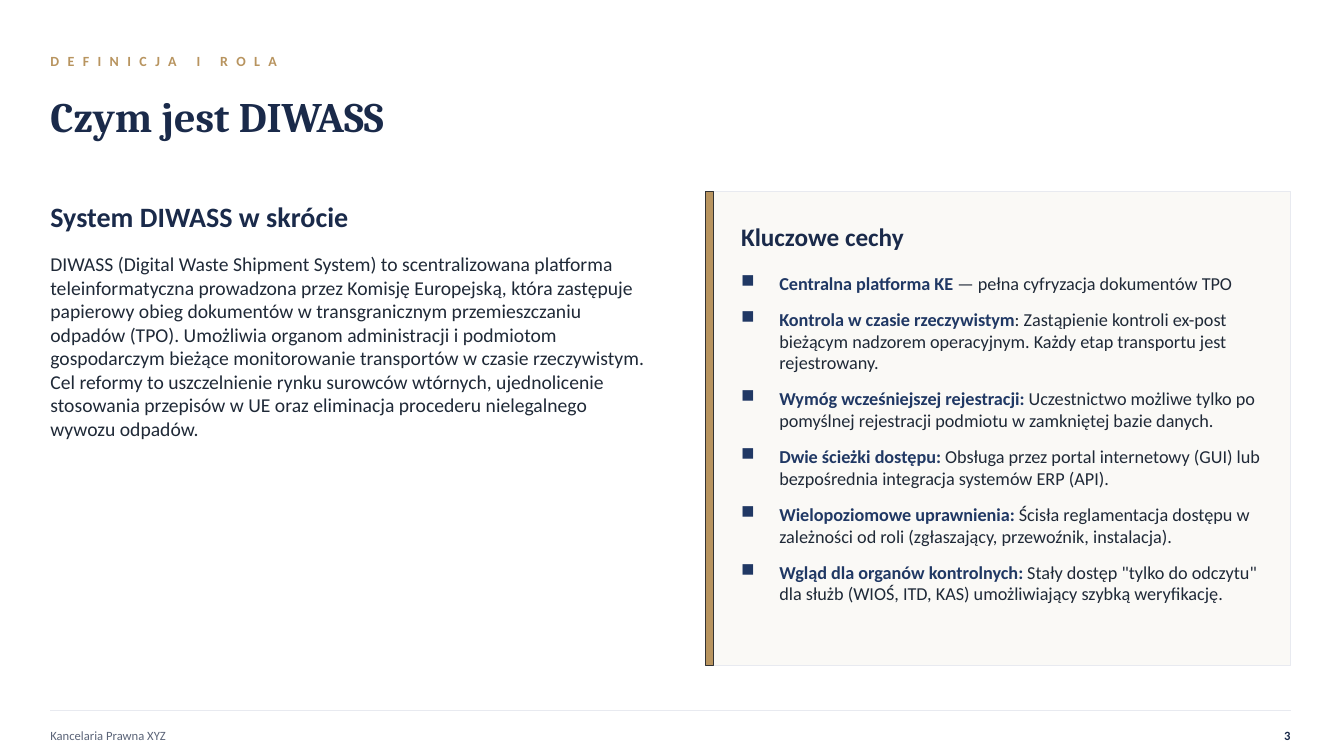
from dataclasses import dataclass

from lxml import etree
from pptx import Presentation
from pptx.dml.color import RGBColor
from pptx.enum import shapes, text
from pptx.oxml import ns
from pptx.util import Inches, Pt


@dataclass(frozen=True)
class Theme:
    navy: str = "1A2A4A"
    blue: str = "203864"
    ink: str = "1F2937"
    slate: str = "5B6478"
    gold: str = "B8945F"
    cream: str = "FAF9F6"
    rule: str = "E8EAF0"
    edge: str = "333333"
    sans: str = "Calibri"
    serif: str = "Cambria"
    title: int = 30
    heading: int = 20
    card_heading: int = 18
    body: int = 14
    item: int = 13
    eyebrow: int = 10
    footer: int = 9


THEME = Theme()
MARGIN, CONTENT_WIDTH = 0.5, 12.3

SUMMARY = (
    "DIWASS (Digital Waste Shipment System) to scentralizowana platforma "
    "teleinformatyczna prowadzona przez Komisję Europejską, która zastępuje "
    "papierowy obieg dokumentów w transgranicznym przemieszczaniu odpadów (TPO). "
    "Umożliwia organom administracji i podmiotom gospodarczym bieżące "
    "monitorowanie transportów w czasie rzeczywistym. Cel reformy to uszczelnienie "
    "rynku surowców wtórnych, ujednolicenie stosowania przepisów w UE oraz "
    "eliminacja procederu nielegalnego wywozu odpadów."
)
FEATURES = [
    ("Centralna platforma KE ", "— pełna cyfryzacja dokumentów TPO"),
    ("Kontrola w czasie rzeczywistym",
     ": Zastąpienie kontroli ex-post bieżącym nadzorem operacyjnym. "
     "Każdy etap transportu jest rejestrowany."),
    ("Wymóg wcześniejszej rejestracji: ",
     "Uczestnictwo możliwe tylko po pomyślnej rejestracji podmiotu "
     "w zamkniętej bazie danych."),
    ("Dwie ścieżki dostępu: ",
     "Obsługa przez portal internetowy (GUI) lub bezpośrednia integracja "
     "systemów ERP (API)."),
    ("Wielopoziomowe uprawnienia: ",
     "Ścisła reglamentacja dostępu w zależności od roli "
     "(zgłaszający, przewoźnik, instalacja)."),
    ("Wgląd dla organów kontrolnych: ",
     'Stały dostęp "tylko do odczytu" dla służb (WIOŚ, ITD, KAS) '
     "umożliwiający szybką weryfikację."),
]


def style(font, size, color, bold=False, name=THEME.sans):
    font.name, font.size, font.bold = name, Pt(size), bold
    font.color.rgb = RGBColor.from_string(color)


def prepare_frame(box, anchor):
    frame = box.text_frame
    frame.auto_size = text.MSO_AUTO_SIZE.NONE
    frame.word_wrap = True
    frame.vertical_anchor = anchor
    frame.margin_left = frame.margin_right = frame.margin_top = frame.margin_bottom = 0
    return frame


def add_frame(page, left, top, width, height, anchor=text.MSO_ANCHOR.MIDDLE):
    box = page.shapes.add_textbox(*map(Inches, (left, top, width, height)))
    return prepare_frame(box, anchor)


def add_label(page, place, words, size, color, bold=False, anchor=text.MSO_ANCHOR.MIDDLE):
    para = add_frame(page, *place, anchor).paragraphs[0]
    para.text = words
    style(para.font, size, color, bold)
    return para


def add_panel(page, place, fill, line, line_width):
    panel = page.shapes.add_shape(shapes.MSO_SHAPE.RECTANGLE, *map(Inches, place))
    panel.shadow.inherit = False
    panel.fill.solid()
    panel.fill.fore_color.rgb = RGBColor.from_string(fill)
    panel.line.color.rgb = RGBColor.from_string(line)
    panel.line.width = Pt(line_width)


def add_bullet(para, indent):
    props = para._p.get_or_add_pPr()
    props.set("marL", str(Inches(indent)))
    props.set("indent", str(-Inches(indent)))
    etree.SubElement(props, ns.qn("a:buChar")).set("char", "■")


def add_header(page, left, top, width):
    eyebrow = add_label(page, (left, top, 8, 0.3), "DEFINICJA I ROLA",
                        THEME.eyebrow, THEME.gold, bold=True)
    eyebrow.runs[0].font._element.set("spc", "600")

    title = page.shapes.title
    title.left, title.top = Inches(left), Inches(top + 0.35)
    title.width, title.height = Inches(width), Inches(0.7)
    para = prepare_frame(title, text.MSO_ANCHOR.MIDDLE).paragraphs[0]
    para.text = "Czym jest DIWASS"
    para.alignment = text.PP_ALIGN.LEFT
    style(para.font, THEME.title, THEME.navy, True, THEME.serif)


def add_summary(page, left, top, width):
    add_label(page, (left, top, width, 0.5), "System DIWASS w skrócie",
              THEME.heading, THEME.navy, bold=True)
    para = add_label(page, (left, top + 0.6, width, 3.5), SUMMARY,
                     THEME.body, THEME.ink, anchor=text.MSO_ANCHOR.TOP)
    para.space_after = Pt(6)


def add_features_card(page, left, top, width, height):
    add_panel(page, (left, top, width, height), THEME.cream, THEME.rule, 0.75)
    add_panel(page, (left, top, 0.08, height), THEME.gold, THEME.edge, 1)
    inner_left, inner_width = left + 0.35, width - 0.5
    add_label(page, (inner_left, top + 0.2, inner_width, 0.5), "Kluczowe cechy",
              THEME.card_heading, THEME.navy, bold=True)
    frame = add_frame(page, inner_left, top + 0.8, inner_width, height - 1,
                      text.MSO_ANCHOR.TOP)
    for index, (lead, detail) in enumerate(FEATURES):
        para = frame.add_paragraph() if index else frame.paragraphs[0]
        add_bullet(para, 0.38)
        para.space_after = Pt(10)
        style(para.font, THEME.item, THEME.ink)
        for words, color, bold in ((lead, THEME.blue, True), (detail, THEME.ink, False)):
            span = para.add_run()
            span.text = words
            style(span.font, THEME.item, color, bold)


def add_footer(page, left, top, width):
    rule = page.shapes.add_connector(
        shapes.MSO_CONNECTOR.STRAIGHT,
        *map(Inches, (left, top, left + width, top)))
    rule.line.color.rgb = RGBColor.from_string(THEME.rule)
    rule.line.width = Pt(0.75)
    etree.SubElement(rule._element.spPr, ns.qn("a:effectLst"))
    add_label(page, (left, top + 0.1, 5, 0.3), "Kancelaria Prawna XYZ",
              THEME.footer, THEME.slate)
    number = add_label(page, (left + width - 0.5, top + 0.1, 0.5, 0.3), "3",
                       THEME.footer, THEME.navy, bold=True)
    number.alignment = text.PP_ALIGN.RIGHT


def main():
    deck = Presentation()
    deck.slide_width, deck.slide_height = Inches(13.33), Inches(7.5)
    page = deck.slides.add_slide(deck.slide_layouts.get_by_name("Title Only"))
    add_header(page, MARGIN, 0.45, CONTENT_WIDTH)
    add_summary(page, MARGIN, 1.9, 6)
    add_features_card(page, 7, 1.9, 5.8, 4.7)
    add_footer(page, MARGIN, 7.05, CONTENT_WIDTH)
    deck.save("out.pptx")


if __name__ == "__main__":
    main()
